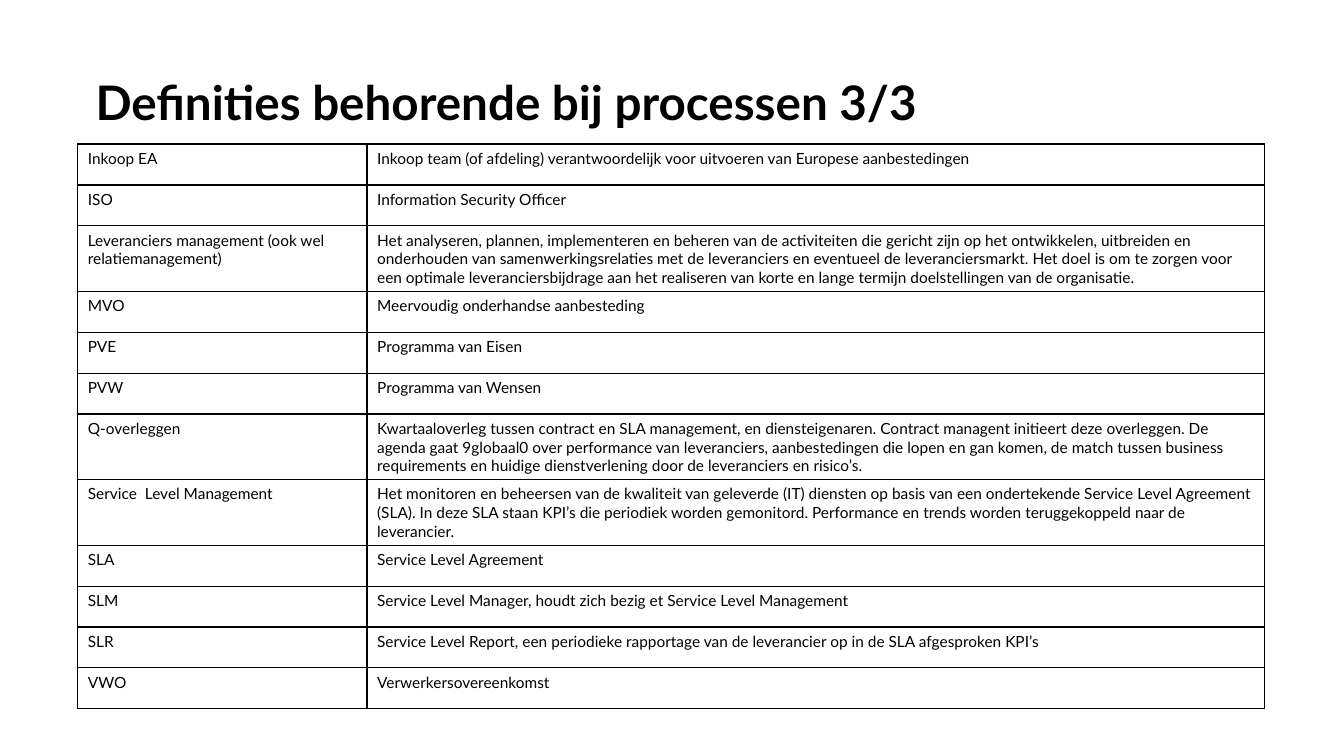
from pptx import Presentation, util as u
from pptx.dml.color import RGBColor
from pptx.enum import text
from pptx.oxml import parse_xml
from pptx.oxml.ns import nsdecls

FONT = "Lato"
BLACK = "000000"
WHITE = "FFFFFF"

DEFINITIONS = [
    ("Inkoop EA", "Inkoop team (of afdeling) verantwoordelijk voor uitvoeren van Europese aanbestedingen"),
    ("ISO", "Information Security Officer"),
    ("Leveranciers management (ook wel relatiemanagement)",
     "Het analyseren, plannen, implementeren en beheren van de activiteiten die gericht zijn op het "
     "ontwikkelen, uitbreiden en onderhouden van samenwerkingsrelaties met de leveranciers en eventueel "
     "de leveranciersmarkt. Het doel is om te zorgen voor een optimale leveranciersbijdrage aan het "
     "realiseren van korte en lange termijn doelstellingen van de organisatie."),
    ("MVO", "Meervoudig onderhandse aanbesteding"),
    ("PVE", "Programma van Eisen"),
    ("PVW", "Programma van Wensen"),
    ("Q-overleggen",
     "Kwartaaloverleg tussen contract en SLA management, en diensteigenaren. Contract managent initieert "
     "deze overleggen. De agenda gaat 9globaal0 over performance van leveranciers, aanbestedingen die "
     "lopen en gan komen, de match tussen business requirements en huidige dienstverlening door de "
     "leveranciers en risico’s."),
    ("Service  Level Management",
     "Het monitoren en beheersen van de kwaliteit van geleverde (IT) diensten op basis van een "
     "ondertekende Service Level Agreement (SLA). In deze SLA staan KPI’s die periodiek worden "
     "gemonitord. Performance en trends worden teruggekoppeld naar de leverancier."),
    ("SLA", "Service Level Agreement"),
    ("SLM", "Service Level Manager, houdt zich bezig et Service Level Management"),
    ("SLR", "Service Level Report, een periodieke rapportage van de leverancier op in de SLA afgesproken KPI’s"),
    ("VWO", "Verwerkersovereenkomst"),
]


def color(value):
    return RGBColor.from_string(value)


def write(frame, wording, size, bold=False):
    frame.text = wording
    font = frame.paragraphs[0].runs[0].font
    font.name, font.size, font.bold = FONT, u.Pt(size), bold
    font.color.rgb = color(BLACK)


def border(cell, value, width):
    properties = cell._tc.get_or_add_tcPr()
    for position, side in enumerate(("lnL", "lnR", "lnT", "lnB")):
        properties.insert(position, parse_xml(
            f'<a:{side} {nsdecls("a")} w="{u.Pt(width)}"><a:solidFill>'
            f'<a:srgbClr val="{value}"/></a:solidFill></a:{side}>'))


def add_title(slide, wording, left, top, width, height):
    title = slide.shapes.add_textbox(left, top, width, height).text_frame
    title.word_wrap = True
    title.vertical_anchor = text.MSO_ANCHOR.TOP
    title.margin_left = title.margin_right = title.margin_top = title.margin_bottom = 0
    write(title, wording, 34, bold=True)
    title.paragraphs[0].line_spacing = 0.9


def add_definitions(slide, definitions, left, top, width, row_height):
    table = slide.shapes.add_table(
        len(definitions), 2, left, top, width, row_height * len(definitions)).table
    table.first_row = table.horz_banding = False
    term_width = u.Cm(7.29)
    table.columns[0].width = term_width
    table.columns[1].width = width - term_width
    for row, definition in zip(table.rows, definitions):
        row.height = row_height
        for cell, wording in zip(row.cells, definition):
            write(cell.text_frame, wording, 11)
            cell.fill.solid()
            cell.fill.fore_color.rgb = color(WHITE)
            border(cell, BLACK, 1)


def main():
    deck = Presentation()
    deck.slide_width, deck.slide_height = u.Cm(33.87), u.Cm(19.05)
    slide = deck.slides.add_slide(deck.slide_layouts[6])
    add_title(slide, "Definities behorende bij processen 3/3",
              u.Cm(2.41), u.Cm(2.01), u.Cm(29.46), u.Cm(0.94))
    add_definitions(slide, DEFINITIONS, u.Cm(1.96), u.Cm(3.63), u.Cm(29.9), u.Cm(1.03))
    deck.save("out.pptx")


if __name__ == "__main__":
    main()
